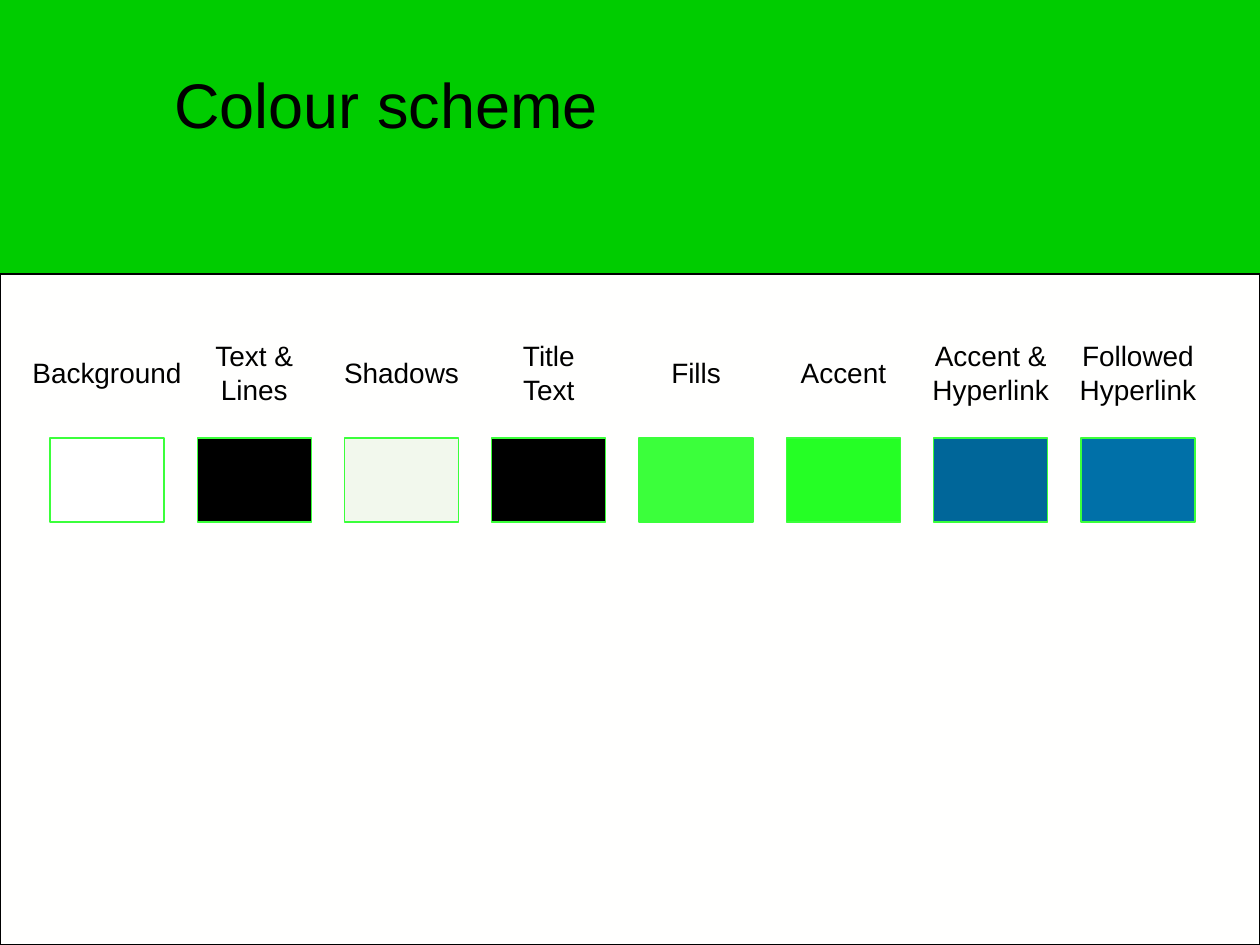
from dataclasses import dataclass

from pptx import Presentation
from pptx.dml.color import RGBColor
from pptx.enum.shapes import MSO_SHAPE as Shape
from pptx.enum.text import MSO_ANCHOR as Anchor, MSO_AUTO_SIZE as AutoSize, PP_ALIGN as Align
from pptx.util import Emu, Pt


@dataclass(frozen=True)
class Theme:
    font: str = "Arial"
    title_size: int = 36
    label_size: int = 16
    line_width: float = 0.75
    background: str = "00CC00"
    panel: str = "FFFFFE"
    ink: str = "000000"
    swatch_line: str = "3BFF3B"


THEME = Theme()

SLIDE_W, SLIDE_H = 1260, 945
PANEL_TOP = 274
SWATCH_TOP, SWATCH_W, SWATCH_H = 438, 114, 84
FIRST_LEFT, LAST_LEFT = 50, 1081
LABEL_MIDDLE = 372
ONE_LINE_H, TWO_LINE_H = 47, 81

SCHEME = [
    ("Background", "FFFFFF", 175),
    ("Text &\nLines", "000000", 106),
    ("Shadows", "F2F8ED", 140),
    ("Title\vText", "000000", 79),
    ("Fills", "3BFF3B", 74),
    ("Accent", "25FF25", 111),
    ("Accent &\nHyperlink", "006699", 141),
    ("Followed\nHyperlink", "0070A8", 141),
]


def px(length):
    return Emu(round(length * 914400 / 126))


def rgb(code):
    return RGBColor.from_string(code)


def add_box(slide, left, top, width, height, fill, line):
    box = slide.shapes.add_shape(Shape.RECTANGLE, px(left), px(top), px(width), px(height))
    box.shadow.inherit = False
    box.fill.solid()
    box.fill.fore_color.rgb = rgb(fill)
    box.line.color.rgb = rgb(line)
    box.line.width = Pt(THEME.line_width)


def add_text(slide, left, top, width, height, text, size, align):
    frame = slide.shapes.add_textbox(px(left), px(top), px(width), px(height)).text_frame
    frame.text = text
    frame.vertical_anchor = Anchor.MIDDLE
    for paragraph in frame.paragraphs:
        paragraph.alignment = align
        for run in paragraph.runs:
            run.font.name = THEME.font
            run.font.size = Pt(size)
            run.font.color.rgb = rgb(THEME.ink)
    return frame


def add_title(slide, text):
    title = add_text(slide, 162, 36, 1043, 134, text, THEME.title_size, Align.LEFT)
    title.word_wrap = True


def add_label(slide, center, width, text):
    height = ONE_LINE_H if len(text.splitlines()) == 1 else TWO_LINE_H
    label = add_text(slide, center - width / 2, LABEL_MIDDLE - height / 2, width, height,
                     text, THEME.label_size, Align.CENTER)
    label.margin_left = label.margin_right = 0
    label.word_wrap = False
    label.auto_size = AutoSize.NONE


def main():
    deck = Presentation()
    deck.slide_width, deck.slide_height = px(SLIDE_W), px(SLIDE_H)
    slide = deck.slides.add_slide(deck.slide_layouts[6])
    slide.background.fill.solid()
    slide.background.fill.fore_color.rgb = rgb(THEME.background)

    add_title(slide, "Colour scheme")
    add_box(slide, 0, PANEL_TOP, SLIDE_W, SLIDE_H - PANEL_TOP, THEME.panel, THEME.ink)

    pitch = (LAST_LEFT - FIRST_LEFT) / (len(SCHEME) - 1)
    for column, (role, colour, label_width) in enumerate(SCHEME):
        left = FIRST_LEFT + column * pitch
        add_box(slide, left, SWATCH_TOP, SWATCH_W, SWATCH_H, colour, THEME.swatch_line)
        add_label(slide, left + SWATCH_W / 2, label_width, role)

    deck.save("out.pptx")


if __name__ == "__main__":
    main()
